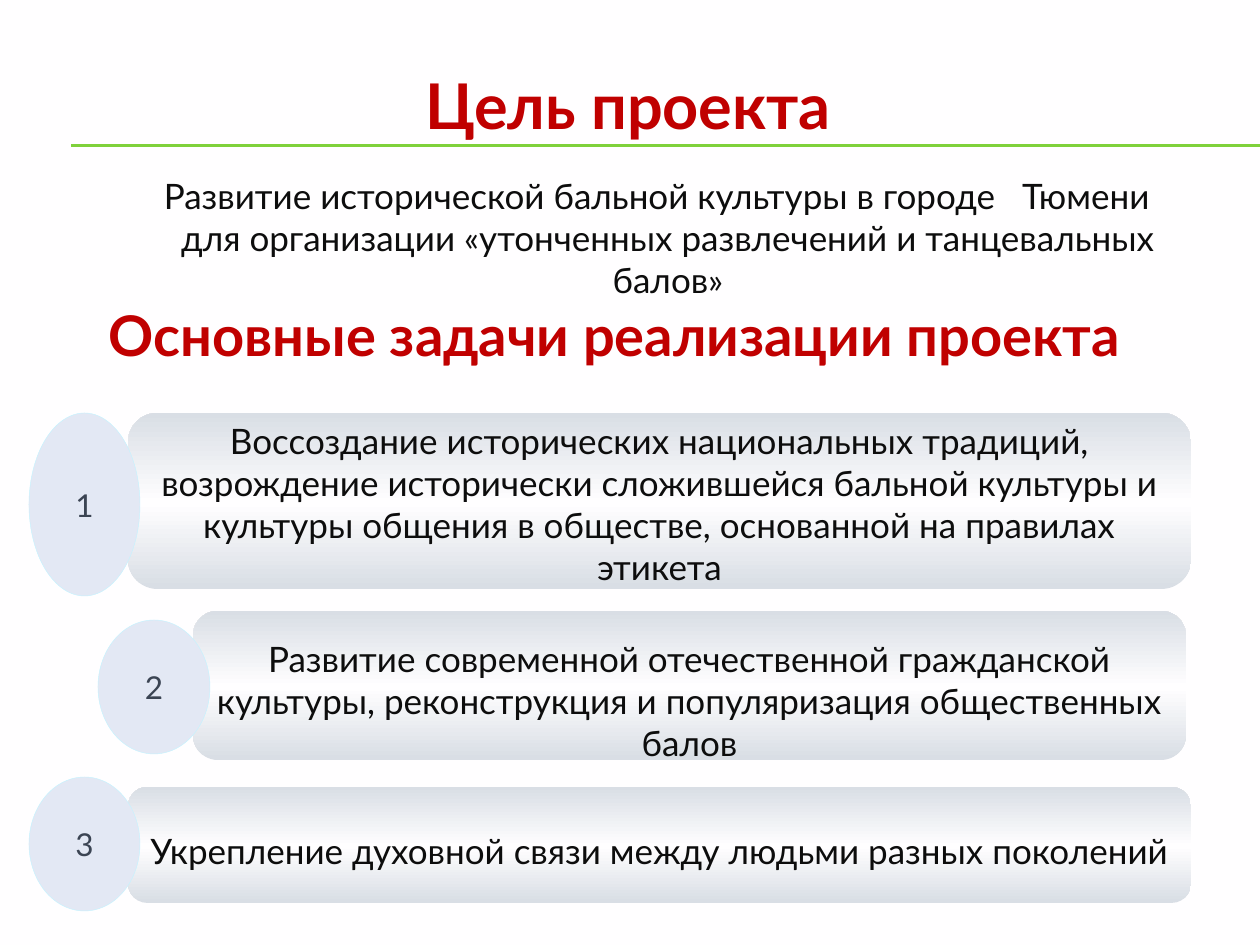
from copy import deepcopy

from lxml.etree import SubElement
from pptx import Presentation
from pptx.dml.color import RGBColor
from pptx.enum.shapes import MSO_CONNECTOR, MSO_SHAPE
from pptx.enum.text import MSO_ANCHOR, MSO_AUTO_SIZE, PP_ALIGN
from pptx.oxml.ns import qn
from pptx.util import Pt

EMU_PER_PX = 914400 / 126

# task text, card box, number box, extra space above the text
TASKS = [
    ("Воссоздание исторических национальных традиций, возрождение исторически "
     "сложившейся бальной культуры и культуры общения в обществе, основанной "
     "на правилах этикета", (128, 413, 1063, 176), (29, 413, 111, 183), 6),
    ("Развитие современной отечественной гражданской культуры, реконструкция "
     "и популяризация общественных балов",
     (193, 611, 993, 149), (98, 620, 112, 134), 30),
    ("Укрепление духовной связи между людьми разных поколений",
     (128, 787, 1063, 116), (29, 777, 111, 134), 12),
]


def px(value):
    return round(value * EMU_PER_PX)


def color(value):
    return RGBColor.from_string(value)


class SlideBuilder:
    font = "Lato"
    background = "FFFEFF"
    red = "C00000"
    dark = "0D0D0D"
    green = "7FD13B"
    card_edge = "D9DEE5"
    badge_fill = "E3E8F4"
    badge_line = "C5F3FF"
    badge_text = "3B4453"

    def __init__(self, slide):
        self.slide = slide
        fill = slide.background.fill
        fill.solid()
        fill.fore_color.rgb = color(self.background)

    def place(self, shape, box):
        shape.left, shape.top, shape.width, shape.height = map(px, box)

    def set_text(self, shape, text, size, text_color, bold=False,
                 align=PP_ALIGN.CENTER, anchor=MSO_ANCHOR.MIDDLE):
        frame = shape.text_frame
        frame.text = text
        frame.word_wrap = True
        frame.auto_size = MSO_AUTO_SIZE.NONE
        frame.vertical_anchor = anchor
        paragraph = frame.paragraphs[0]
        paragraph.alignment = align
        paragraph.space_before = Pt(0)
        font = paragraph.runs[0].font
        font.name, font.size, font.bold = self.font, Pt(size), bold
        font.color.rgb = color(text_color)
        return paragraph

    def title(self, text, box):
        shape = self.slide.shapes.title
        self.place(shape, box)
        self.set_text(shape, text, 36, self.red, bold=True, align=PP_ALIGN.LEFT)

    def body(self, text, box):
        shape = self.slide.placeholders[1]
        self.place(shape, box)
        paragraph = self.set_text(shape, text, 20, self.dark,
                                  anchor=MSO_ANCHOR.TOP)
        properties = paragraph._p.get_or_add_pPr()
        properties.set("marL", str(px(48)))
        properties.set("indent", str(px(-22)))
        SubElement(properties, qn("a:buNone"))

    def heading(self, text, box):
        shape = self.slide.shapes.add_textbox(*map(px, box))
        self.set_text(shape, text, 32, self.red, bold=True)

    def rule(self, left, right, y):
        line = self.slide.shapes.add_connector(
            MSO_CONNECTOR.STRAIGHT, px(left), px(y), px(right), px(y))
        line.line.color.rgb = color(self.green)
        line.line.width = Pt(0.75)
        SubElement(line._element.spPr, qn("a:effectLst"))

    def card(self, text, box, space_above):
        shape = self.slide.shapes.add_shape(
            MSO_SHAPE.ROUNDED_RECTANGLE, *map(px, box))
        shape.shadow.inherit = False
        shape.line.fill.background()
        self.shade(shape)
        self.set_text(shape, text, 20, self.dark)
        shape.text_frame.margin_top = px(space_above)
        shape.text_frame.margin_bottom = 0

    def shade(self, shape):
        """Fill with a vertical gradient, light in the middle."""
        fill = shape.fill
        fill.gradient()
        fill.gradient_angle = 90
        stop_list = shape._element.spPr.find(".//" + qn("a:gsLst"))
        stop_list.append(deepcopy(stop_list[-1]))
        stops = [(0.01, self.card_edge), (0.49, self.background),
                 (1, self.card_edge)]
        for stop, (position, value) in zip(fill.gradient_stops, stops):
            stop.position = position
            stop.color.rgb = color(value)

    def badge(self, number, box):
        shape = self.slide.shapes.add_shape(
            MSO_SHAPE.FLOWCHART_CONNECTOR, *map(px, box))
        shape.shadow.inherit = False
        shape.fill.solid()
        shape.fill.fore_color.rgb = color(self.badge_fill)
        shape.line.color.rgb = color(self.badge_line)
        shape.line.width = Pt(0.25)
        self.set_text(shape, str(number), 18, self.badge_text)


def main():
    presentation = Presentation()
    presentation.slide_width, presentation.slide_height = px(1260), px(945)
    builder = SlideBuilder(
        presentation.slides.add_slide(presentation.slide_layouts[1]))

    for y in (145, 146):
        builder.rule(71, 1260, y)
    builder.title("Цель проекта", (413, 59, 454, 90))
    builder.body("Развитие исторической бальной культуры в городе   Тюмени "
                 "для организации «утонченных развлечений и танцевальных балов»",
                 (98, 168, 1092, 716))
    builder.heading("Основные задачи реализации проекта", (69, 275, 1092, 118))
    for number, (text, card_box, badge_box, space_above) in enumerate(TASKS, 1):
        builder.card(text, card_box, space_above)
        builder.badge(number, badge_box)

    presentation.save("out.pptx")


if __name__ == "__main__":
    main()
